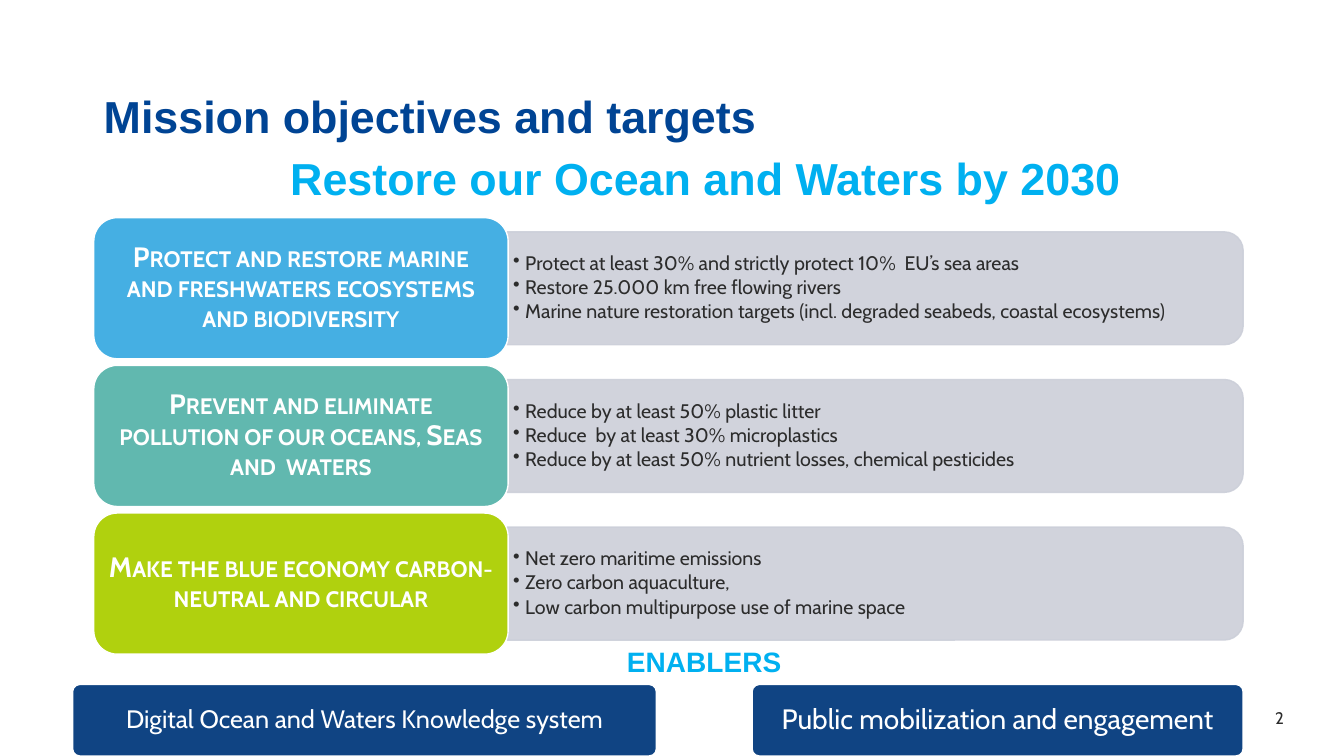
from dataclasses import dataclass

from lxml.etree import SubElement
from pptx import Presentation
from pptx.dml.color import RGBColor
from pptx.enum.shapes import MSO_SHAPE as Preset
from pptx.enum.text import MSO_ANCHOR as Anchor, PP_ALIGN as Align
from pptx.oxml.ns import qn
from pptx.util import Inches, Pt

NAVY = RGBColor(0x00, 0x44, 0x94)
CYAN = RGBColor(0x00, 0xB0, 0xF0)
INK = RGBColor(0x2C, 0x2C, 0x2C)
WHITE = RGBColor(0xFF, 0xFF, 0xFF)
GREY = RGBColor(0xCC, 0xCF, 0xD9)
BLUE = RGBColor(0x45, 0xAF, 0xE3)
TEAL = RGBColor(0x61, 0xB8, 0xAF)
LIME = RGBColor(0xB0, 0xD1, 0x0E)
ENABLER_BLUE = RGBColor(0x10, 0x44, 0x83)

CARD_LEFT, CARD_TOP, CARD_WIDTH, CARD_HEIGHT = 0.93, 2.16, 4.11, 1.4
ROW_PITCH = 1.465
BAR_LEFT, BAR_WIDTH, BAR_HEIGHT = 5.03, 7.3, 1.12
TARGETS_WIDTH, TARGETS_HEIGHT = 7.24, 1.01


@dataclass
class Box:
    left: float
    top: float
    width: float
    height: float

    def lengths(self) -> list:
        return [Inches(v) for v in (self.left, self.top, self.width, self.height)]


@dataclass
class Style:
    size: float
    color: RGBColor
    font: str = "Cabin"
    bold: bool = False
    small_caps: bool = False
    align: Align = Align.LEFT
    spacing: float = 0.9


@dataclass
class Objective:
    name: str
    color: RGBColor
    targets: list[str]


@dataclass
class Enabler:
    name: str
    box: Box
    size: float
    inset: float


OBJECTIVES = [
    Objective("Protect and restore marine and freshwaters ecosystems and biodiversity", BLUE, [
        "Protect at least 30% and strictly protect 10%  EU’s sea areas",
        "Restore 25.000 km free flowing rivers",
        "Marine nature restoration targets (incl. degraded seabeds, coastal ecosystems)",
    ]),
    Objective("Prevent and eliminate pollution of our oceans, Seas and  waters", TEAL, [
        "Reduce by at least 50% plastic litter",
        "Reduce  by at least 30% microplastics",
        "Reduce by at least 50% nutrient losses, chemical pesticides",
    ]),
    Objective("Make the blue economy carbon- neutral and circular", LIME, [
        "Net zero maritime emissions",
        "Zero carbon aquaculture,",
        "Low carbon multipurpose use of marine space",
    ]),
]
ENABLERS = [
    Enabler("Digital Ocean and Waters Knowledge system", Box(0.72, 6.79, 5.79, 0.71), 18, 0.07),
    Enabler("Public mobilization and engagement", Box(7.46, 6.79, 4.87, 0.71), 20, 0.08),
]


def write(paragraph, text: str, style: Style) -> None:
    paragraph.alignment = style.align
    paragraph.line_spacing = style.spacing
    run = paragraph.add_run()
    run.text = text
    run.font.name = style.font
    run.font.size = Pt(style.size)
    run.font.bold = style.bold
    run.font.color.rgb = style.color
    if style.small_caps:
        run.font._element.set("cap", "small")


def set_insets(frame, side: float, end: float) -> None:
    frame.margin_left = frame.margin_right = Inches(side)
    frame.margin_top = frame.margin_bottom = Inches(end)
    frame.vertical_anchor = Anchor.MIDDLE
    frame.word_wrap = True


def add_label(slide, box: Box, text: str, style: Style, wrap: bool = True) -> None:
    frame = slide.shapes.add_textbox(*box.lengths()).text_frame
    frame.word_wrap = wrap
    write(frame.paragraphs[0], text, style)


def add_panel(slide, preset: Preset, box: Box, fill: RGBColor, line: RGBColor):
    panel = slide.shapes.add_shape(preset, *box.lengths())
    panel.shadow.inherit = False
    panel.fill.solid()
    panel.fill.fore_color.rgb = fill
    panel.line.color.rgb = line
    panel.line.width = Pt(1)
    return panel


def add_bar(slide, middle: float) -> None:
    # Upright shape turned a quarter, so its rounded corners face right
    center = BAR_LEFT + BAR_WIDTH / 2
    box = Box(center - BAR_HEIGHT / 2, middle - BAR_WIDTH / 2, BAR_HEIGHT, BAR_WIDTH)
    bar = add_panel(slide, Preset.ROUND_2_SAME_RECTANGLE, box, GREY, GREY)
    bar.rotation = 90
    for color in bar._element.spPr.iter(qn("a:srgbClr")):
        SubElement(color, qn("a:alpha"), val="90000")


def add_targets(slide, middle: float, targets: list[str]) -> None:
    box = Box(BAR_LEFT, middle - TARGETS_HEIGHT / 2, TARGETS_WIDTH, TARGETS_HEIGHT)
    frame = slide.shapes.add_textbox(*box.lengths()).text_frame
    set_insets(frame, 0.06, 0.03)
    for index, target in enumerate(targets):
        paragraph = frame.add_paragraph() if index else frame.paragraphs[0]
        paragraph.level = 1
        properties = paragraph._p.get_or_add_pPr()
        properties.set("marL", str(Inches(0.12)))
        properties.set("indent", str(Inches(-0.12)))
        SubElement(properties, qn("a:buChar"), char="•")
        paragraph.space_after = Pt(2)
        write(paragraph, target, Style(14, INK))


def add_objective(slide, top: float, objective: Objective) -> None:
    middle = top + CARD_HEIGHT / 2
    add_bar(slide, middle)
    add_targets(slide, middle, objective.targets)
    box = Box(CARD_LEFT, top, CARD_WIDTH, CARD_HEIGHT)
    card = add_panel(slide, Preset.ROUNDED_RECTANGLE, box, objective.color, WHITE)
    set_insets(card.text_frame, 0.08, 0.04)
    style = Style(20, WHITE, bold=True, small_caps=True, align=Align.CENTER)
    write(card.text_frame.paragraphs[0], objective.name, style)


def add_enabler(slide, enabler: Enabler) -> None:
    panel = add_panel(slide, Preset.ROUNDED_RECTANGLE, enabler.box, ENABLER_BLUE, WHITE)
    panel.adjustments[0] = 0.1
    set_insets(panel.text_frame, enabler.inset, enabler.inset)
    style = Style(enabler.size, WHITE, align=Align.CENTER)
    write(panel.text_frame.paragraphs[0], enabler.name, style)


def main() -> None:
    deck = Presentation()
    deck.slide_width, deck.slide_height = Inches(13.33), Inches(7.5)
    slide = deck.slides.add_slide(deck.slide_layouts[6])

    # Page number and headings
    add_label(slide, Box(12.55, 6.97, 0.7, 0.4), "2", Style(12, INK, spacing=1.0))
    add_label(slide, Box(0.93, 0.89, 12.08, 1.45), "Mission objectives and targets",
              Style(32, NAVY, "Arial", bold=True))
    add_label(slide, Box(2.14, 1.51, 9.72, 0.67), "Restore our Ocean and Waters by 2030",
              Style(32, CYAN, "Arial", bold=True, align=Align.CENTER))

    # Objectives with their targets
    for row, objective in enumerate(OBJECTIVES):
        add_objective(slide, CARD_TOP + row * ROW_PITCH, objective)

    # Enablers
    for enabler in ENABLERS:
        add_enabler(slide, enabler)
    add_label(slide, Box(6.12, 6.34, 1.75, 0.44), "ENABLERS",
              Style(20, CYAN, "Arial", bold=True, spacing=1.0), wrap=False)

    deck.save("out.pptx")


if __name__ == "__main__":
    main()
